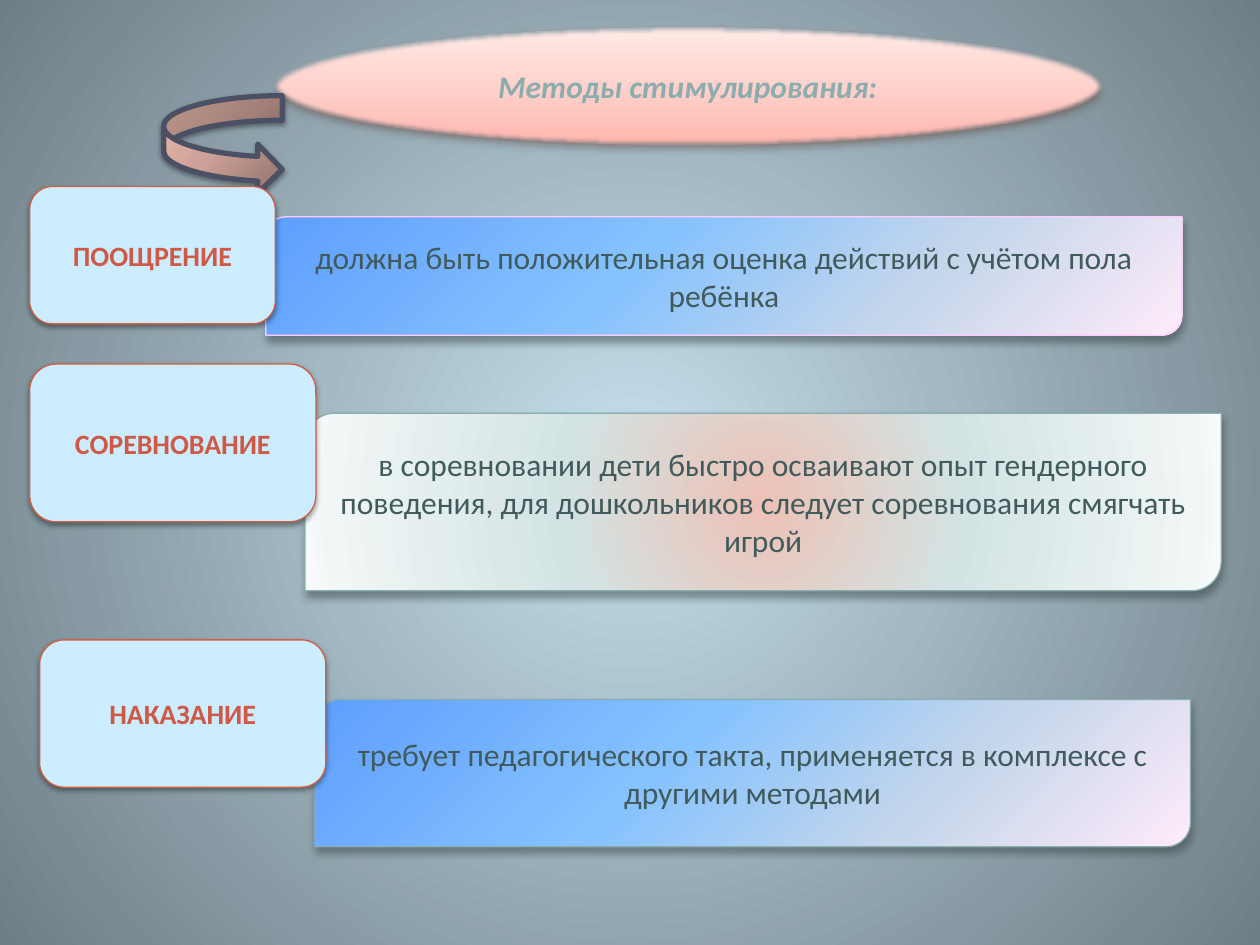
from lxml.etree import SubElement as Sub
from pptx import Presentation
from pptx.dml.color import RGBColor
from pptx.enum.shapes import MSO_SHAPE as Shape
from pptx.enum.text import MSO_ANCHOR, PP_ALIGN
from pptx.oxml.ns import qn
from pptx.util import Cm, Pt

color = RGBColor.from_string

SKY = [(0, "5E9EFF"), (40, "85C2FF"), (70, "C4D6EB"), (100, "FFEBFA")]
MIST = [(0, "EDC1B6"), (43, "D3E3E3"), (93, "F1F6F6"), (100, "FAFCFC")]
ROSE = [(0, "FFB5AC"), (35, "FFCAC4"), (100, "FFEBE8")]
CLAY = [(0, "8F716A"), (50, "CBA096"), (100, "F1BEB2")]
BACKDROP = [(0, "C5E0ED"), (100, "6F7E85")]
CENTER = (50, 50, 50, 50)
CORNER = (100, 100, 0, 0)
# Shadow: colour, opacity in %, blur and distance in points
DEEP = ("313D3D", 48, 4.5, 3)
WARM = ("4B2218", 48, 4.5, 3)
SOFT = ("000000", 38, 3.1, 1.6)


def set_gradient(fill, parent, stops, direction):
    """Direction is an angle in degrees, or the focus rectangle of a circle."""
    fill.background()
    empty = parent.find(qn("a:noFill"))
    gradient = parent.makeelement(qn("a:gradFill"), {"rotWithShape": "1"})
    parent.replace(empty, gradient)
    stop_list = Sub(gradient, qn("a:gsLst"))
    for position, value in stops:
        stop = Sub(stop_list, qn("a:gs"), pos=str(position * 1000))
        Sub(stop, qn("a:srgbClr"), val=value)
    if isinstance(direction, tuple):
        circle = Sub(gradient, qn("a:path"), path="circle")
        sides = {side: str(value * 1000) for side, value in zip("ltrb", direction)}
        Sub(circle, qn("a:fillToRect"), sides)
    else:
        Sub(gradient, qn("a:lin"), ang=str(direction * 60000), scaled="0")


def add_box(kind, place, fill, line, shadow, text="", size=18, ink="415B5C", bold=False):
    shape = slide.shapes.add_shape(kind, *[Cm(value) for value in place])
    properties = shape.element.spPr
    if isinstance(fill, str):
        shape.fill.solid()
        shape.fill.fore_color.rgb = color(fill)
    else:
        set_gradient(shape.fill, properties, *fill)
    shape.line.color.rgb = color(line)
    shape.line.width = Pt(0.75)

    # Shadow falling straight down
    shape.shadow.inherit = False
    shade, opacity, blur, distance = shadow
    outer = Sub(properties.find(qn("a:effectLst")), qn("a:outerShdw"),
                blurRad=str(Pt(blur)), dist=str(Pt(distance)),
                dir="5400000", rotWithShape="0")
    Sub(Sub(outer, qn("a:srgbClr"), val=shade), qn("a:alpha"), val=str(opacity * 1000))

    if text:
        frame = shape.text_frame
        frame.text = text
        frame.word_wrap = True
        frame.vertical_anchor = MSO_ANCHOR.MIDDLE
        paragraph = frame.paragraphs[0]
        paragraph.alignment = PP_ALIGN.CENTER
        font = paragraph.runs[0].font
        font.name, font.size, font.bold = "Calibri", Pt(size), bold
        font.color.rgb = color(ink)
    return shape


presentation = Presentation()
presentation.slide_width, presentation.slide_height = Cm(25.4), Cm(19.05)
slide = presentation.slides.add_slide(presentation.slide_layouts[6])

# Background
background_fill = slide.background.fill
background_fill.solid()
set_gradient(background_fill, slide.element.find(".//" + qn("p:bgPr")), BACKDROP, CENTER) \
    if background_fill.background() is None else None

# Descriptions
descriptions = [
    ((6.35, 14.1, 17.65, 2.97), (SKY, 45), "8CADAE",
     "требует педагогического такта, применяется в комплексе с другими методами"),
    ((6.15, 8.33, 18.47, 3.58), (MIST, CENTER), "8CADAE",
     "в соревновании дети быстро осваивают опыт гендерного поведения, "
     "для дошкольников следует соревнования смягчать игрой"),
    ((5.36, 4.37, 18.47, 2.39), (SKY, 45), "FFCCFF",
     "должна быть положительная оценка действий с учётом пола ребёнка"),
]
for place, fill, line, text in descriptions:
    add_box(Shape.ROUND_2_DIAG_RECTANGLE, place, fill, line, DEEP, text)

# Title with a soft edge
title = add_box(Shape.OVAL, (5.51, 0.53, 16.71, 2.39), (ROSE, 270), "D05F44", WARM,
                "Методы стимулирования:", ink="8CADAE", bold=True)
title.text_frame.paragraphs[0].runs[0].font.italic = True
Sub(title.element.spPr.find(qn("a:effectLst")), qn("a:softEdge"), rad=str(Pt(2.5)))

# Arrow from the title to the first method
arrow = add_box(Shape.CURVED_RIGHT_ARROW, (3.3, 1.93, 2.39, 1.98), (CLAY, CORNER),
                "4B5064", SOFT)
arrow.line.width = Pt(3)

# Method names
methods = [
    ((0.6, 3.76, 4.95, 2.77), "ПООЩРЕНИЕ"),
    ((0.6, 7.34, 5.77, 3.18), "СОРЕВНОВАНИЕ"),
    ((0.8, 12.9, 5.77, 2.97), "НАКАЗАНИЕ"),
]
for place, text in methods:
    add_box(Shape.ROUNDED_RECTANGLE, place, "CCECFF", "D05F44", SOFT,
            text, size=16, ink="D05945", bold=True)

presentation.save("out.pptx")
